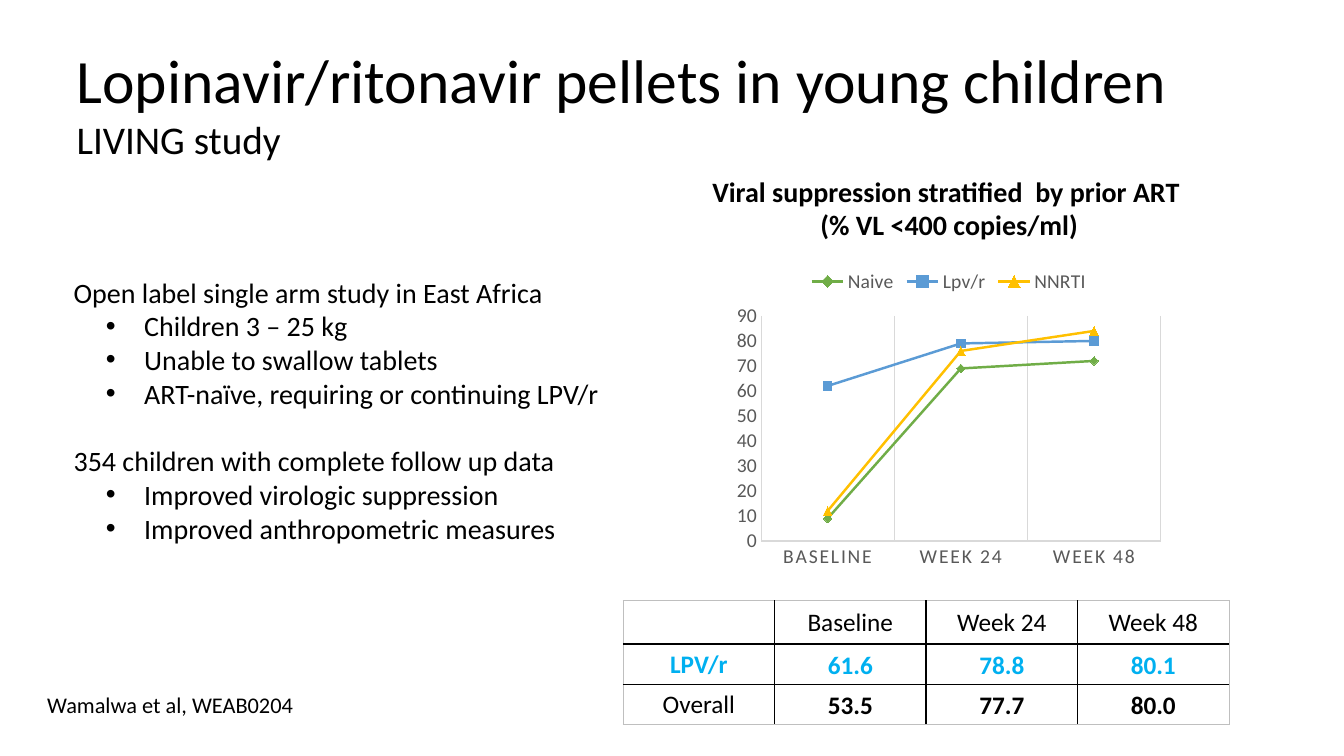
import pptx
import pptx.chart.data
import pptx.dml.color
import pptx.enum.chart
import pptx.enum.text
import pptx.oxml
import pptx.oxml.ns
import pptx.util
from pptx.util import Inches

FONT = "Calibri"
BLACK = pptx.dml.color.RGBColor(0x00, 0x00, 0x00)
CYAN = pptx.dml.color.RGBColor(0x00, 0xB0, 0xF0)
AXIS_TEXT = pptx.dml.color.RGBColor(0x59, 0x59, 0x59)
AXIS_LINE = pptx.dml.color.RGBColor(0xD9, 0xD9, 0xD9)
TABLE_EDGE = pptx.dml.color.RGBColor(0xBF, 0xBF, 0xBF)
GREEN = pptx.dml.color.RGBColor(0x70, 0xAD, 0x47)
BLUE = pptx.dml.color.RGBColor(0x5B, 0x9B, 0xD5)
GOLD = pptx.dml.color.RGBColor(0xFF, 0xC0, 0x00)

ALIGN = pptx.enum.text.PP_ALIGN
ANCHOR = pptx.enum.text.MSO_ANCHOR
MARKER = pptx.enum.chart.XL_MARKER_STYLE

STUDY_SECTIONS = [
    ("Open label single arm study in East Africa",
     ["Children 3 – 25 kg", "Unable to swallow tablets",
      "ART-naïve, requiring or continuing LPV/r"]),
    ("354 children with complete follow up data",
     ["Improved virologic suppression", "Improved anthropometric measures"]),
]
VISITS = ["BASELINE", "WEEK 24", "WEEK 48"]
SUPPRESSION_SERIES = [
    ("Naive", (9, 69, 72), GREEN, MARKER.DIAMOND),
    ("Lpv/r", (62, 79, 80), BLUE, MARKER.SQUARE),
    ("NNRTI", (12, 76, 84), GOLD, MARKER.TRIANGLE),
]
SUPPRESSION_ROWS = [
    ["", "Baseline", "Week 24", "Week 48"],
    ["LPV/r", "61.6", "78.8", "80.1"],
    ["Overall", "53.5", "77.7", "80.0"],
]


def set_font(font, size, color=BLACK, bold=False):
    font.name = FONT
    font.size = pptx.util.Pt(size)
    font.bold = bold
    font.color.rgb = color


def place(shape, box):
    shape.left, shape.top, shape.width, shape.height = map(Inches, box)


def add_lines(text_frame, lines, alignment):
    """Write one paragraph for each (text, size, bold) line."""
    for index, (text, size, bold) in enumerate(lines):
        paragraph = text_frame.add_paragraph() if index else text_frame.paragraphs[0]
        paragraph.text = text
        paragraph.alignment = alignment
        set_font(paragraph.font, size, bold=bold)


def fill_title(title, box):
    place(title, box)
    text_frame = title.text_frame
    text_frame.auto_size = pptx.enum.text.MSO_AUTO_SIZE.NONE
    text_frame.vertical_anchor = ANCHOR.MIDDLE
    add_lines(text_frame, [("Lopinavir/ritonavir pellets in young children", 44, False),
                           ("LIVING study", 28, False)], ALIGN.LEFT)


def set_bullet(paragraph, character, margin, indent):
    properties = paragraph._p.get_or_add_pPr()
    properties.set("marL", str(Inches(margin)))
    properties.set("indent", str(Inches(indent)))
    if character:
        font = pptx.oxml.ns.qn("a:buFont")
        properties.append(properties.makeelement(font, {"typeface": "Arial"}))
        bullet = pptx.oxml.ns.qn("a:buChar")
        properties.append(properties.makeelement(bullet, {"char": character}))
    else:
        properties.append(properties.makeelement(pptx.oxml.ns.qn("a:buNone"), {}))


def fill_study_list(body, box):
    place(body, box)
    text_frame = body.text_frame
    text_frame.auto_size = pptx.enum.text.MSO_AUTO_SIZE.NONE
    text_frame.vertical_anchor = ANCHOR.TOP
    paragraph = text_frame.paragraphs[0]
    for section, (heading, points) in enumerate(STUDY_SECTIONS):
        for level, text in [(0, heading)] + [(1, point) for point in points]:
            if paragraph is None:
                paragraph = text_frame.add_paragraph()
            paragraph.text = text
            paragraph.level = level
            section_start = section > 0 and level == 0
            paragraph.space_before = pptx.util.Pt(24.4 if section_start else 0)
            set_font(paragraph.font, 20)
            if level:
                set_bullet(paragraph, "•", 0.7, -0.38)
            else:
                set_bullet(paragraph, None, 0, 0)
            paragraph = None


def add_text(slide, box, lines, alignment, wrap):
    text_frame = slide.shapes.add_textbox(*map(Inches, box)).text_frame
    text_frame.word_wrap = wrap
    add_lines(text_frame, lines, alignment)


def format_axis(axis):
    axis.major_tick_mark = axis.minor_tick_mark = pptx.enum.chart.XL_TICK_MARK.NONE
    axis.format.line.color.rgb = AXIS_LINE
    axis.format.line.width = pptx.util.Pt(0.75)
    set_font(axis.tick_labels.font, 14, AXIS_TEXT)


def add_suppression_chart(slide, box):
    data = pptx.chart.data.CategoryChartData()
    data.categories = VISITS
    for name, values, _, _ in SUPPRESSION_SERIES:
        data.add_series(name, values)
    chart = slide.shapes.add_chart(
        pptx.enum.chart.XL_CHART_TYPE.LINE_MARKERS, *map(Inches, box), data).chart
    set_font(chart.font, 14)
    chart.has_title = False
    chart.has_legend = True
    chart.legend.position = pptx.enum.chart.XL_LEGEND_POSITION.TOP
    chart.legend.include_in_layout = False
    set_font(chart.legend.font, 14, AXIS_TEXT)

    visit_axis, percent_axis = chart.category_axis, chart.value_axis
    format_axis(visit_axis)
    format_axis(percent_axis)
    visit_axis.has_major_gridlines = True
    gridline = visit_axis.major_gridlines.format.line
    gridline.color.rgb = AXIS_LINE
    gridline.width = pptx.util.Pt(0.75)
    visit_axis.tick_labels.font._element.set("spc", "120")
    percent_axis.has_major_gridlines = False
    percent_axis.minimum_scale = 0
    percent_axis.maximum_scale = 90
    percent_axis.major_unit = 10

    plot = chart.plots[0]
    plot.vary_by_categories = False
    for series, (_, _, color, marker_style) in zip(plot.series, SUPPRESSION_SERIES):
        series.smooth = False
        series.format.line.color.rgb = color
        series.format.line.width = pptx.util.Pt(1.75)
        series.marker.style = marker_style
        series.marker.size = 6
        series.marker.format.fill.solid()
        series.marker.format.fill.fore_color.rgb = color
        series.marker.format.line.color.rgb = color


def set_borders(cell, outer_sides):
    """Draw black inner borders and thin grey ones on the outer sides."""
    properties = cell._tc.get_or_add_tcPr()
    for index, side in enumerate("LRTB"):
        color, width = (TABLE_EDGE, 0.5) if side in outer_sides else (BLACK, 1)
        properties.insert(index, pptx.oxml.parse_xml(
            f'<a:ln{side} {pptx.oxml.ns.nsdecls("a")} w="{pptx.util.Pt(width)}">'
            f'<a:solidFill><a:srgbClr val="{color}"/></a:solidFill></a:ln{side}>'))


def add_suppression_table(slide, box):
    row_count, column_count = len(SUPPRESSION_ROWS), len(SUPPRESSION_ROWS[0])
    table = slide.shapes.add_table(row_count, column_count, *map(Inches, box)).table
    table.first_row = table.horz_banding = False
    for row, height in zip(table.rows, (0.43, 0.4, 0.4)):
        row.height = Inches(height)
    for row, texts in enumerate(SUPPRESSION_ROWS):
        for column, text in enumerate(texts):
            cell = table.cell(row, column)
            cell.fill.background()
            cell.vertical_anchor = ANCHOR.MIDDLE
            paragraph = cell.text_frame.paragraphs[0]
            paragraph.text = text
            paragraph.alignment = ALIGN.CENTER
            is_value = row > 0 and column > 0
            set_font(paragraph.font, 18, CYAN if row == 1 else BLACK,
                     bold=row == 1 or is_value)
            if is_value:
                cell.margin_left = cell.margin_right = cell.margin_top = Inches(0.01)
                cell.margin_bottom = 0
                paragraph.line_spacing = 1.07
            edges = {"L": column == 0, "R": column == column_count - 1,
                     "T": row == 0, "B": row == row_count - 1}
            set_borders(cell, [side for side, is_outer in edges.items() if is_outer])


def build_study_slide(presentation):
    slide = presentation.slides.add_slide(presentation.slide_layouts[1])
    fill_title(slide.shapes.title, (0.66, 0.24, 12.4, 1.55))
    fill_study_list(slide.placeholders[1], (0.63, 2.68, 5.52, 2.79))
    add_text(slide, (6.41, 1.68, 6.01, 0.77),
             [("Viral suppression stratified  by prior ART ", 20, True),
              ("(% VL <400 copies/ml)", 20, True)], ALIGN.CENTER, True)
    add_suppression_chart(slide, (7.22, 2.56, 4.38, 3.15))
    add_suppression_table(slide, (6.18, 5.96, 6.01, 1.23))
    add_text(slide, (0.37, 6.81, 2.67, 0.37),
             [("Wamalwa et al, WEAB0204", 16, False)], ALIGN.LEFT, False)


def main():
    presentation = pptx.Presentation()
    presentation.slide_width = Inches(13.33)
    presentation.slide_height = Inches(7.5)
    build_study_slide(presentation)
    presentation.save("out.pptx")


if __name__ == "__main__":
    main()
